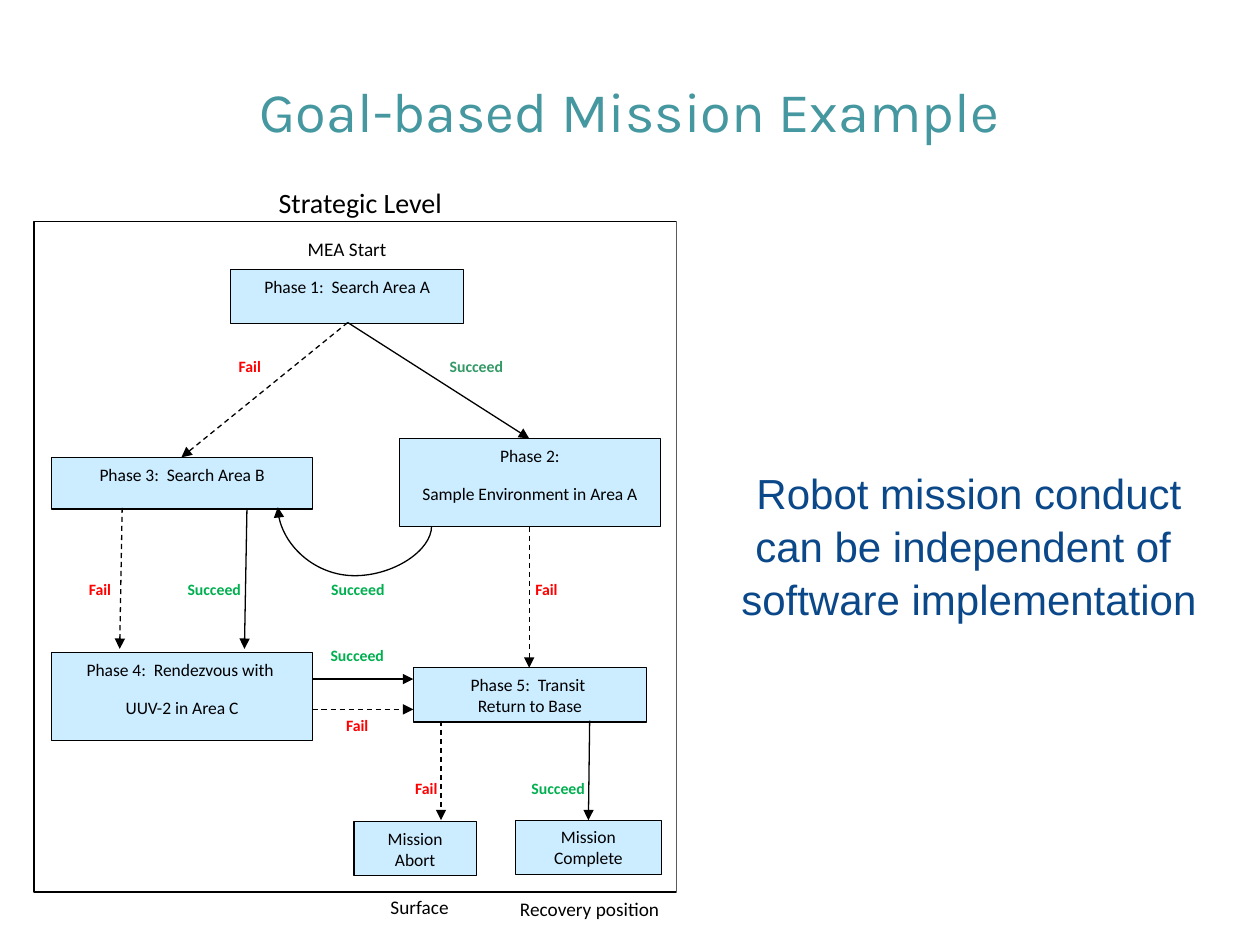
from typing import NamedTuple

from lxml import etree
from pptx import Presentation
from pptx.dml.color import RGBColor
from pptx.enum.dml import MSO_LINE
from pptx.enum.shapes import MSO_CONNECTOR, MSO_SHAPE
from pptx.enum.text import MSO_ANCHOR, PP_ALIGN
from pptx.oxml.ns import qn
from pptx.util import Emu, Pt

PX = 9144  # EMU in one px, 100 px to the inch
LEFT, MID, RIGHT = PP_ALIGN.LEFT, PP_ALIGN.CENTER, PP_ALIGN.RIGHT
RECT, DASH = MSO_SHAPE.RECTANGLE, MSO_LINE.DASH
LINE, CURVE = MSO_CONNECTOR.STRAIGHT, MSO_CONNECTOR.CURVE
BLACK, WHITE, SKY = "000000", "FFFFFF", "CCECFF"
RED, GREEN, MOSS = "FF0000", "00B050", "339966"
TEAL, NAVY = "4597A0", "0B488A"


class Area(NamedTuple):
    left: int
    top: int
    width: int
    height: int


class Style(NamedTuple):
    size: int
    color: str = BLACK
    face: str = "Calibri"
    bold: bool = False
    align: PP_ALIGN = MID
    after: int = 0


class Node(NamedTuple):
    area: Area
    lines: tuple[str, ...]
    after: int = 0


class Label(NamedTuple):
    area: Area
    text: str
    style: Style


class Arrow(NamedTuple):
    start: tuple[int, int]
    end: tuple[int, int]
    fail: bool = False


def mark(align: PP_ALIGN, color: str) -> Style:
    """Style of an outcome label beside an arrow."""
    return Style(9, color, bold=True, align=align)


NOTE = Style(11)
NODES = [
    Node(Area(183, 214, 185, 43), ("Phase 1:  Search Area A",)),
    Node(Area(317, 348, 207, 70), ("Phase 2:", "Sample Environment in Area A"), 10),
    Node(Area(41, 363, 207, 41), ("Phase 3:  Search Area B",)),
    Node(Area(41, 518, 207, 70), ("Phase 4:  Rendezvous with ", "UUV-2 in Area C"), 10),
    Node(Area(328, 530, 185, 43), ("Phase 5:  Transit ", "Return to Base")),
    Node(Area(281, 652, 97, 43), ("Mission Abort",)),
    Node(Area(409, 651, 116, 43), ("Mission Complete",)),
]
ARROWS = [
    Arrow((276, 256), (420, 348)),
    Arrow((276, 256), (144, 363), True),
    Arrow((196, 404), (194, 515)),
    Arrow((97, 403), (95, 515), True),
    Arrow((248, 539), (328, 539)),
    Arrow((248, 563), (328, 563), True),
    Arrow((420, 418), (420, 530), True),
    Arrow((468, 572), (467, 651)),
    Arrow((350, 572), (350, 651), True),
]
LABELS = [
    Label(Area(347, 278, 101, 37), "Succeed", mark(LEFT, MOSS)),
    Label(Area(151, 278, 66, 37), "Fail", mark(RIGHT, RED)),
    Label(Area(415, 455, 68, 37), "Fail", mark(LEFT, RED)),
    Label(Area(33, 455, 65, 37), "Fail", mark(RIGHT, RED)),
    Label(Area(100, 455, 101, 37), "Succeed", mark(RIGHT, GREEN)),
    Label(Area(243, 455, 82, 29), "Succeed", mark(MID, GREEN)),
    Label(Area(233, 508, 101, 37), "Succeed", mark(MID, GREEN)),
    Label(Area(233, 563, 101, 37), "Fail", mark(MID, RED)),
    Label(Area(373, 613, 101, 37), "Succeed", mark(RIGHT, GREEN)),
    Label(Area(292, 613, 65, 37), "Fail", mark(RIGHT, RED)),
    Label(Area(185, 183, 181, 22), "MEA Start", NOTE),
    Label(Area(131, 142, 310, 45), "Strategic Level", Style(16)),
    Label(Area(292, 706, 82, 22), "Surface", NOTE),
    Label(Area(400, 707, 136, 22), "Recovery position", NOTE),
]


def px(*nums: int) -> list[Emu]:
    return [Emu(num * PX) for num in nums]


def rgb(code: str) -> RGBColor:
    return RGBColor.from_string(code)


def write(shape, lines: tuple[str, ...], style: Style, anchor=MSO_ANCHOR.TOP):
    frame = shape.text_frame
    frame.word_wrap = True
    frame.vertical_anchor = anchor
    frame.text = "\n".join(lines)
    for para in frame.paragraphs:
        para.alignment = style.align
        para.space_after = Pt(style.after)
        font = para.font
        font.name, font.size, font.bold = style.face, Pt(style.size), style.bold
        font.color.rgb = rgb(style.color)
    return frame


def add_rect(slide, area: Area, fill: str, edge: bool = True):
    shape = slide.shapes.add_shape(RECT, *px(*area))
    shape.shadow.inherit = False
    shape.fill.solid()
    shape.fill.fore_color.rgb = rgb(fill)
    if edge:
        shape.line.color.rgb = rgb(BLACK)
        shape.line.width = Pt(0.75)
    else:
        shape.line.fill.background()
    return shape


def add_text(slide, label: Label, anchor=MSO_ANCHOR.TOP) -> None:
    box = slide.shapes.add_textbox(*px(*label.area))
    write(box, (label.text,), label.style, anchor)


def add_arrow(slide, arrow: Arrow, kind=LINE):
    link = slide.shapes.add_connector(kind, *px(*arrow.start, *arrow.end))
    link.line.color.rgb = rgb(BLACK)
    link.line.width = Pt(0.75)
    if arrow.fail:
        link.line.dash_style = DASH
    props = link._element.spPr
    etree.SubElement(props.find(qn("a:ln")), qn("a:tailEnd"), type="triangle")
    etree.SubElement(props, qn("a:effectLst"))
    return link


def add_loop(slide) -> None:
    """Curve from phase 2 back to phase 3, a quarter turn with a low bulge."""
    link = add_arrow(slide, Arrow((274, 471), (289, 349)), CURVE)
    props = link._element.spPr
    props.find(qn("a:xfrm")).set("rot", str(270 * 60000))
    geom = props.find(qn("a:prstGeom"))
    guides = geom.find(qn("a:avLst"))
    if guides is None:
        guides = etree.SubElement(geom, qn("a:avLst"))
    etree.SubElement(guides, qn("a:gd"), name="adj1", fmla="val -262800")


def main() -> None:
    deck = Presentation()
    deck.slide_width, deck.slide_height = px(1000, 750)
    slide = deck.slides.add_slide(deck.slide_layouts[6])

    add_rect(slide, Area(27, 176, 510, 532), WHITE)
    for node in NODES:
        write(add_rect(slide, node.area, SKY), node.lines, Style(10, after=node.after))
    for arrow in ARROWS:
        add_arrow(slide, arrow)
    add_loop(slide)
    for label in LABELS:
        add_text(slide, label)

    title = Label(Area(25, 25, 950, 125), "Goal-based Mission Example", Style(32, TEAL, "Karla"))
    add_text(slide, title, MSO_ANCHOR.MIDDLE)

    panel = add_rect(slide, Area(537, 125, 464, 625), WHITE, edge=False)
    claim = ("Robot mission conduct", "can be independent of ", "software implementation")
    frame = write(panel, claim, Style(24, NAVY, "Arial"))
    frame.margin_top = px(244)[0]
    for para in frame.paragraphs:
        para.line_spacing = 1.05

    deck.save("out.pptx")


if __name__ == "__main__":
    main()
